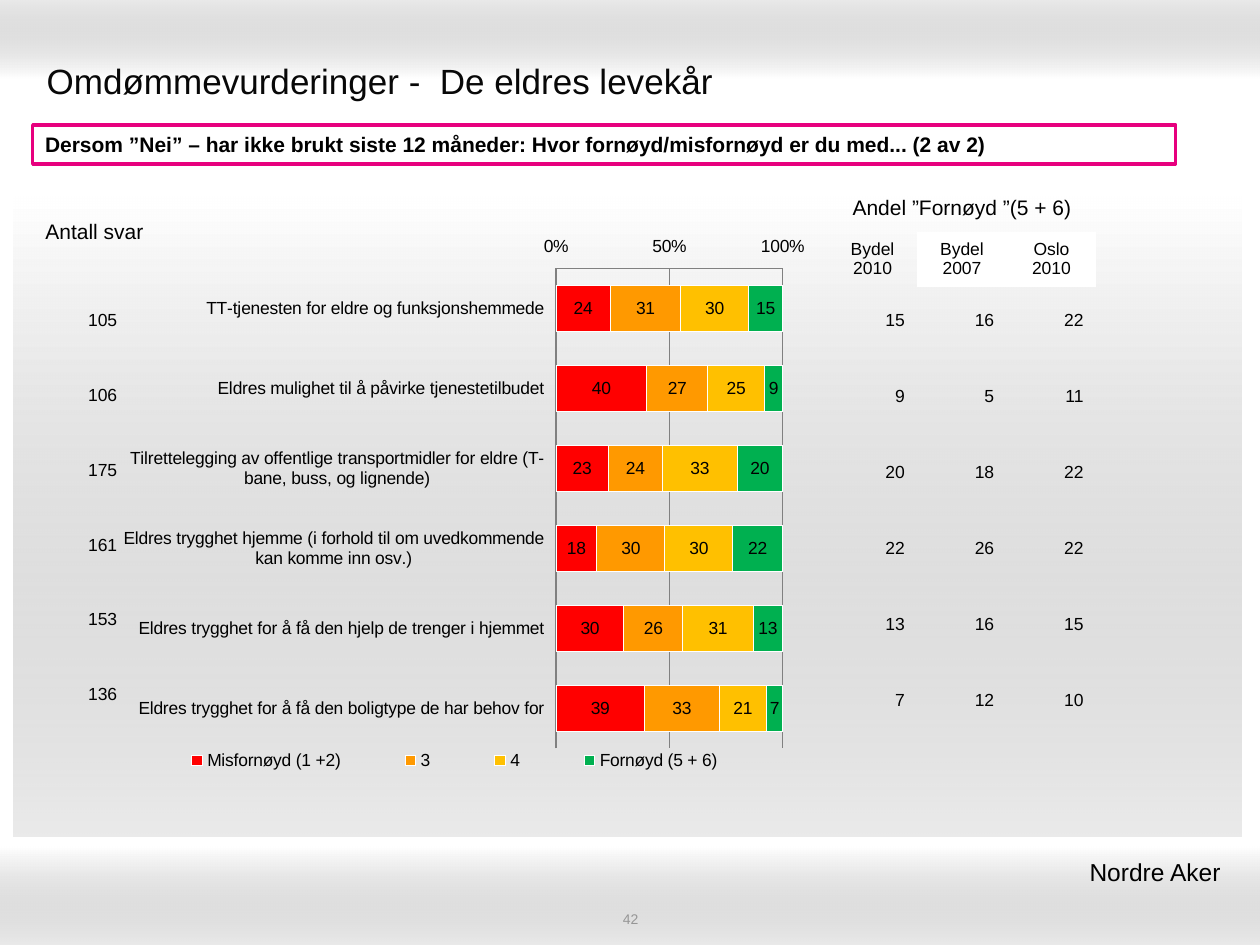
from lxml import etree
from pptx import Presentation
from pptx import util as u
from pptx.chart.data import CategoryChartData
from pptx.dml.color import RGBColor
from pptx.enum import chart as ch, shapes, text
from pptx.oxml import parse_xml
from pptx.oxml.ns import nsdecls, qn

BLACK = RGBColor(0, 0, 0)
INK = RGBColor(0x08, 0x08, 0x08)
WHITE = RGBColor(0xFF, 0xFF, 0xFF)
GREY = RGBColor(0x96, 0x96, 0x96)
GRID = RGBColor(0x80, 0x80, 0x80)
PINK = RGBColor(0xE7, 0x00, 0x7E)
RED = RGBColor(0xFF, 0, 0)
ORANGE = RGBColor(0xFF, 0x99, 0)
AMBER = RGBColor(0xFF, 0xC0, 0)
GREEN = RGBColor(0, 0xB0, 0x50)

FONT = "Arial"
PLAIN = "{2D5ABB26-0587-4C30-8999-92F81FD0307C}"  # no style, no grid
LEFT, MID, RIGHT = text.PP_ALIGN.LEFT, text.PP_ALIGN.CENTER, text.PP_ALIGN.RIGHT

# Places on the slide, in inches: left, top, width, height
CHART = (0.98, 1.79, 5.51, 4.54)
PLOT = (4.4, 2.13, 1.81, 3.81)
LEGEND = (1.02, 5.92, 5.14, 0.23)

CATS = [
    "TT-tjenesten for eldre og funksjonshemmede",
    "Eldres mulighet til å påvirke tjenestetilbudet",
    "Tilrettelegging av offentlige transportmidler for eldre (T-bane, buss, og lignende)",
    "Eldres trygghet hjemme (i forhold til om uvedkommende kan komme inn osv.)",
    "Eldres trygghet for å få den hjelp de trenger i hjemmet",
    "Eldres trygghet for å få den boligtype de har behov for",
]
SERIES = [
    ("Misfornøyd (1 +2)", RED, (24, 40, 23, 18, 30, 39)),
    ("3", ORANGE, (31, 27, 24, 30, 26, 33)),
    ("4", AMBER, (30, 25, 33, 30, 31, 21)),
    ("Fornøyd (5 + 6)", GREEN, (15, 9, 20, 22, 13, 7)),
]
COUNTS = [[105], [106], [175], [161], [153], [136]]
SHARES = [(15, 16, 22), (9, 5, 11), (20, 18, 22), (22, 26, 22), (13, 16, 15), (7, 12, 10)]
HEADS = [("Andel ”Fornøyd ”(5 + 6)", "", ""),
         ("Bydel\n2010", "Bydel\n2007", "Oslo\n2010")]


def box(*at):
    return [u.Inches(n) for n in at]


def style(font, size, color=BLACK, bold=False):
    font.name, font.size, font.bold = FONT, u.Pt(size), bold
    font.color.rgb = color


def write(frame, words, size, align=LEFT, color=BLACK, bold=False):
    frame.text = words
    for para in frame.paragraphs:
        para.alignment = align
        for run in para.runs:
            style(run.font, size, color, bold)


def add_band(slide, at, angle):
    """Rectangle fading from white to a thin grey."""
    band = slide.shapes.add_shape(shapes.MSO_SHAPE.RECTANGLE, *box(*at))
    band.shadow.inherit = False
    band.line.fill.background()
    fade = parse_xml(
        f'<a:gradFill {nsdecls("a")} rotWithShape="1"><a:gsLst>'
        '<a:gs pos="0"><a:srgbClr val="FFFFFF"/></a:gs>'
        '<a:gs pos="100000"><a:srgbClr val="999999"><a:alpha val="20000"/></a:srgbClr></a:gs>'
        f'</a:gsLst><a:lin ang="{angle * 60000}" scaled="0"/></a:gradFill>')
    band._element.spPr.find(qn("a:prstGeom")).addnext(fade)


def add_text(slide, at, words, size, align, color=BLACK, anchor=text.MSO_ANCHOR.TOP):
    frame = slide.shapes.add_textbox(*box(*at)).text_frame
    frame.word_wrap = True
    frame.vertical_anchor = anchor
    write(frame, words, size, align, color)


def add_query(slide, words):
    rect = slide.shapes.add_shape(shapes.MSO_SHAPE.RECTANGLE, *box(0.26, 0.99, 9.07, 0.31))
    rect.shadow.inherit = False
    rect.fill.solid()
    rect.fill.fore_color.rgb = WHITE
    rect.line.color.rgb = PINK
    rect.line.width = u.Pt(2)
    rect.text_frame.word_wrap = True
    rect.text_frame.vertical_anchor = text.MSO_ANCHOR.MIDDLE
    write(rect.text_frame, words, 12, bold=True)


def add_grid(slide, left, top, width, heights, rows, align, sizes):
    """Unstyled table with equal columns; sizes gives the text size of each row."""
    frame = slide.shapes.add_table(len(rows), len(rows[0]),
                                   *box(left, top, width, sum(heights)))
    table = frame.table
    table.first_row = table.horz_banding = False
    table._tbl.tblPr.find(qn("a:tableStyleId")).text = PLAIN
    for row, high, vals, size in zip(table.rows, heights, rows, sizes):
        row.height = u.Inches(high)
        for cell, val in zip(row.cells, vals):
            cell.fill.background()
            cell.vertical_anchor = text.MSO_ANCHOR.MIDDLE
            write(cell.text_frame, str(val), size, align)
    return table


def place(part, at, inner=False):
    """Fix the place of a chart part, turning inches into fractions of the chart."""
    old = part.find(qn("c:layout"))
    if old is not None:
        part.remove(old)
    x, y, w, h = at
    left, top, wide, high = CHART
    spots = (("xMode", "edge"), ("yMode", "edge"), ("x", (x - left) / wide),
             ("y", (y - top) / high), ("w", w / wide), ("h", h / high))
    target = '<c:layoutTarget val="inner"/>' if inner else ""
    marks = "".join(f'<c:{key} val="{val}"/>' for key, val in spots)
    layout = etree.fromstring(f'<c:layout {nsdecls("c")}><c:manualLayout>{target}{marks}'
                              '</c:manualLayout></c:layout>')
    part.insert(0 if inner else 1, layout)


def add_bars(slide):
    data = CategoryChartData(number_format="0")
    data.categories = CATS
    for name, _, vals in SERIES:
        data.add_series(name, vals)
    chart = slide.shapes.add_chart(ch.XL_CHART_TYPE.BAR_STACKED, *box(*CHART), data).chart
    style(chart.font, 10)
    chart.has_title = False

    # Bars and their values
    plot = chart.plots[0]
    plot.gap_width, plot.overlap, plot.vary_by_categories = 75, 100, False
    for bar, (_, color, _) in zip(plot.series, SERIES):
        bar.format.fill.solid()
        bar.format.fill.fore_color.rgb = color
        bar.format.line.color.rgb = WHITE
        labels = bar.data_labels
        labels.show_value = True
        labels.number_format, labels.number_format_is_linked = "0", False
        style(labels.font, 10)

    # Axes
    cat, val = chart.category_axis, chart.value_axis
    cat.reverse_order = True
    cat.major_tick_mark = ch.XL_TICK_MARK.NONE
    val.major_tick_mark = ch.XL_TICK_MARK.INSIDE
    val.minimum_scale, val.maximum_scale, val.major_unit = 0, 100, 50
    val.tick_labels.number_format = "General\\%"
    val.tick_labels.number_format_is_linked = False
    val.has_major_gridlines = True
    val.major_gridlines.format.line.color.rgb = GRID
    for axis in (cat, val):
        axis.tick_label_position = ch.XL_TICK_LABEL_POSITION.LOW
        axis.format.line.color.rgb = GRID
        style(axis.tick_labels.font, 10)
        # Level labels may wrap
        body = axis._element.find(qn("c:txPr")).find(qn("a:bodyPr"))
        body.set("rot", "0")
        body.set("vert", "horz")

    # Legend and layout
    chart.has_legend = True
    chart.legend.position = ch.XL_LEGEND_POSITION.BOTTOM
    chart.legend.include_in_layout = False
    style(chart.legend.font, 10)
    place(chart.legend._element, LEGEND)
    place(chart._chartSpace.chart.plotArea, PLOT, inner=True)


def main():
    prs = Presentation()
    prs.slide_width, prs.slide_height = box(10, 7.5)
    slide = prs.slides.add_slide(prs.slide_layouts[5])

    # Backdrop, then the title in front of it
    add_band(slide, (0, 0, 10, 0.62), 270)
    add_band(slide, (0, 6.72, 10, 0.78), 90)
    add_band(slide, (0.11, 1.56, 9.74, 5.08), 90)
    title = slide.shapes.title
    title.left, title.top, title.width, title.height = box(0.27, 0.36, 9.45, 0.55)
    title.text_frame.vertical_anchor = text.MSO_ANCHOR.MIDDLE
    write(title.text_frame, "Omdømmevurderinger -  De eldres levekår", 20, color=INK)
    slide.shapes._spTree.append(title._element)

    add_text(slide, (3.42, 7.22, 3.17, 0.14), "42", 8, MID, GREY, text.MSO_ANCHOR.MIDDLE)
    add_query(slide, "Dersom ”Nei” – har ikke brukt siste 12 måneder: "
                     "Hvor fornøyd/misfornøyd er du med... (2 av 2)")
    add_bars(slide)

    # Shares of satisfied, with their heading
    add_grid(slide, 6.57, 2.24, 2.13, [3.62 / 6] * 6, SHARES, RIGHT, [10] * 6)
    heads = add_grid(slide, 6.57, 1.47, 2.13, [0.37, 0.42], HEADS, MID, [12, 10])
    heads.cell(0, 0).merge(heads.cell(0, 2))
    for col in (1, 2):
        fill = heads.cell(1, col).fill
        fill.solid()
        fill.fore_color.rgb = WHITE

    # Number of answers
    add_grid(slide, 0.51, 2.25, 0.52, [3.56 / 6] * 6, COUNTS, RIGHT, [10] * 6)
    add_grid(slide, 0.04, 1.55, 1.42, [0.59], [["Antall svar"]], MID, [12])

    add_text(slide, (6.1, 6.75, 3.74, 0.34), "Nordre Aker ", 14, RIGHT)
    prs.save("out.pptx")


if __name__ == "__main__":
    main()
